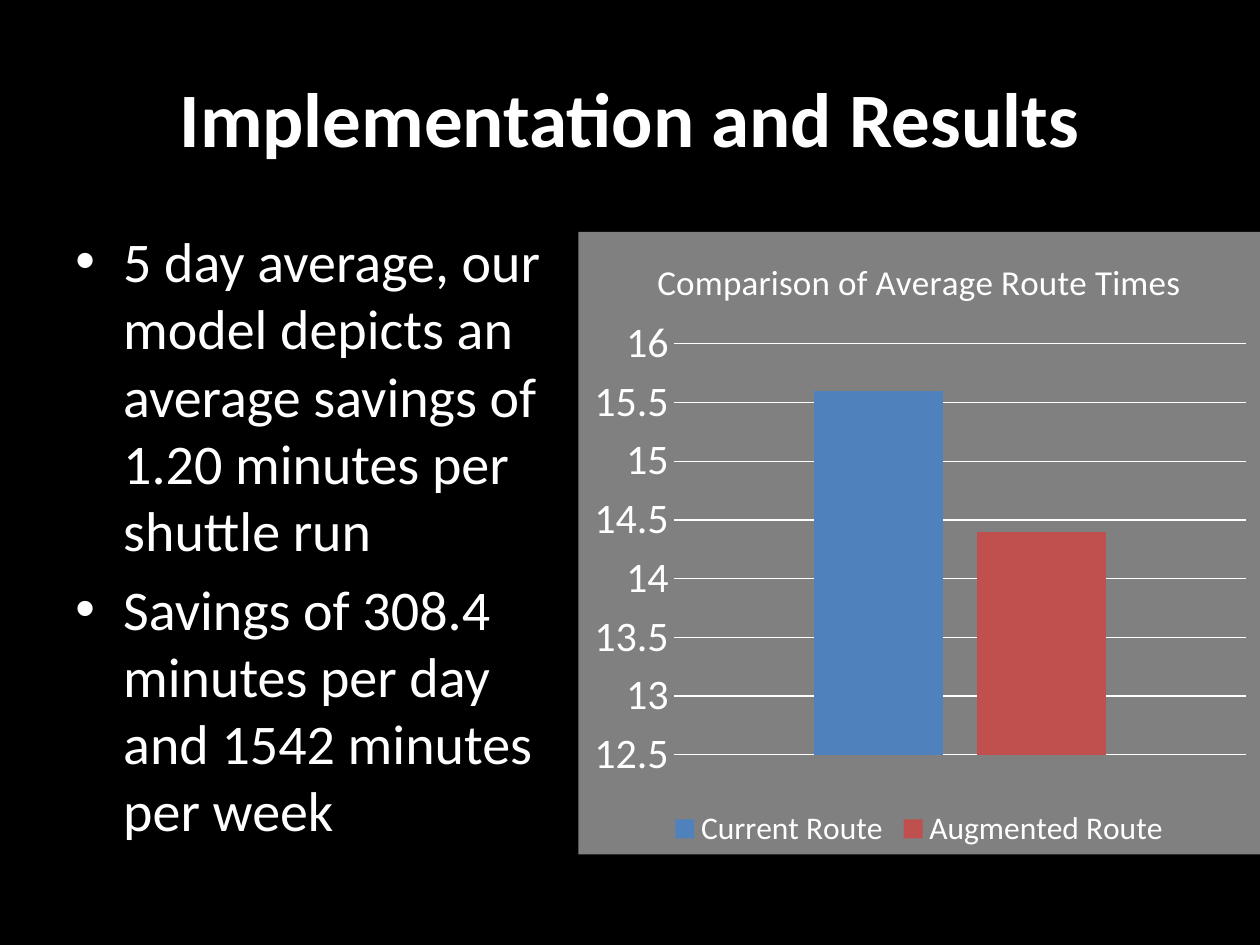
from lxml.etree import SubElement
from pptx import Presentation
from pptx.chart.data import CategoryChartData
from pptx.dml.color import RGBColor
from pptx.enum.chart import XL_CHART_TYPE, XL_LEGEND_POSITION, XL_TICK_MARK
from pptx.enum.text import MSO_ANCHOR, PP_ALIGN
from pptx.oxml import parse_xml
from pptx.oxml.ns import nsdecls, qn
from pptx.util import Inches, Pt

FONT = "Calibri"
COLORS = {
    "back": "000000",
    "text": "FFFFFF",
    "panel": "808080",
    "current": "4F81BD",
    "augmented": "C0504D",
}
POINTS = [
    "5 day average, our model depicts an average savings of 1.20 minutes per shuttle run",
    "Savings of 308.4 minutes per day and 1542 minutes per week",
]
ROUTES = [("Current Route", 15.6, "current"), ("Augmented Route", 14.4, "augmented")]
PLOT = {"x": 0.14, "y": 0.18, "w": 0.84, "h": 0.66}


def color(name):
    """Return the named palette colour."""
    return RGBColor.from_string(COLORS[name])


def style(font, size, bold=False):
    """Set the slide font in white at the given size."""
    font.name, font.size, font.bold = FONT, Pt(size), bold
    font.color.rgb = color("text")


def add_text(slide, box, lines, size, bold=False):
    """Add a wrapped text box with one paragraph per line."""
    frame = slide.shapes.add_textbox(*map(Inches, box)).text_frame
    frame.word_wrap = True
    frame.text = "\n".join(lines)
    for para in frame.paragraphs:
        style(para.runs[0].font, size, bold)
    return frame


def add_title(slide, text):
    """Add the centred slide title."""
    frame = add_text(slide, (0.5, 0.3, 9, 1.25), [text], 44, True)
    frame.vertical_anchor = MSO_ANCHOR.MIDDLE
    frame.paragraphs[0].alignment = PP_ALIGN.CENTER


def add_points(slide, lines):
    """Add the bulleted findings with a hanging indent."""
    frame = add_text(slide, (0.5, 1.75, 3.94, 5.29), lines, 32)
    indent = Inches(0.38)
    for para in frame.paragraphs:
        para.space_before = Pt(6.4)
        props = para._p.get_or_add_pPr()
        props.set("marL", str(indent))
        props.set("indent", str(-indent))
        SubElement(props, qn("a:buFont"), typeface="Arial")
        SubElement(props, qn("a:buChar"), char="•")


def set_panel(chart):
    """Fill the chart background and place its plot area."""
    root = chart._chartSpace
    root.find(qn("c:chart")).addnext(parse_xml(
        f'<c:spPr {nsdecls("c", "a")}><a:solidFill><a:srgbClr val="{COLORS["panel"]}"/>'
        '</a:solidFill><a:ln><a:noFill/></a:ln></c:spPr>'))
    area = root.find(".//" + qn("c:plotArea"))
    for old in area.findall(qn("c:layout")):
        area.remove(old)
    modes = '<c:xMode val="edge"/><c:yMode val="edge"/>'
    sizes = "".join(f'<c:{key} val="{val}"/>' for key, val in PLOT.items())
    area.insert(0, parse_xml(
        f'<c:layout {nsdecls("c")}><c:manualLayout><c:layoutTarget val="inner"/>'
        f'{modes}{sizes}</c:manualLayout></c:layout>'))


def set_axes(chart):
    """Hide the category axis and style the value axis."""
    chart.category_axis.visible = False
    axis = chart.value_axis
    axis.minimum_scale, axis.maximum_scale, axis.major_unit = 12.5, 16, 0.5
    axis.major_tick_mark = axis.minor_tick_mark = XL_TICK_MARK.NONE
    axis.format.line.fill.background()
    axis.tick_labels.number_format = "General"
    axis.tick_labels.number_format_is_linked = False
    style(axis.tick_labels.font, 24)
    line = axis.major_gridlines.format.line
    line.color.rgb = color("text")
    line.width = Pt(0.75)


def add_routes(slide):
    """Add the column chart of average route times."""
    data = CategoryChartData()
    data.categories = ["1"]
    for name, time, _ in ROUTES:
        data.add_series(name, [time])
    box = map(Inches, (4.59, 1.84, 5.41, 4.94))
    chart = slide.shapes.add_chart(XL_CHART_TYPE.COLUMN_CLUSTERED, *box, data).chart
    style(chart.font, 10)
    set_panel(chart)
    set_axes(chart)
    title = chart.chart_title.text_frame
    title.text = "Comparison of Average Route Times"
    style(title.paragraphs[0].runs[0].font, 20)
    chart.has_legend = True
    chart.legend.position = XL_LEGEND_POSITION.BOTTOM
    chart.legend.include_in_layout = False
    style(chart.legend.font, 18)
    plot = chart.plots[0]
    plot.gap_width, plot.overlap, plot.vary_by_categories = 219, -27, False
    for series, (_, _, name) in zip(plot.series, ROUTES):
        series.format.fill.solid()
        series.format.fill.fore_color.rgb = color(name)


def main():
    """Build and save the slide."""
    deck = Presentation()
    deck.slide_width, deck.slide_height = Inches(10), Inches(7.5)
    slide = deck.slides.add_slide(deck.slide_layouts[6])
    slide.background.fill.solid()
    slide.background.fill.fore_color.rgb = color("back")
    add_title(slide, "Implementation and Results")
    add_points(slide, POINTS)
    add_routes(slide)
    deck.save("out.pptx")


if __name__ == "__main__":
    main()
